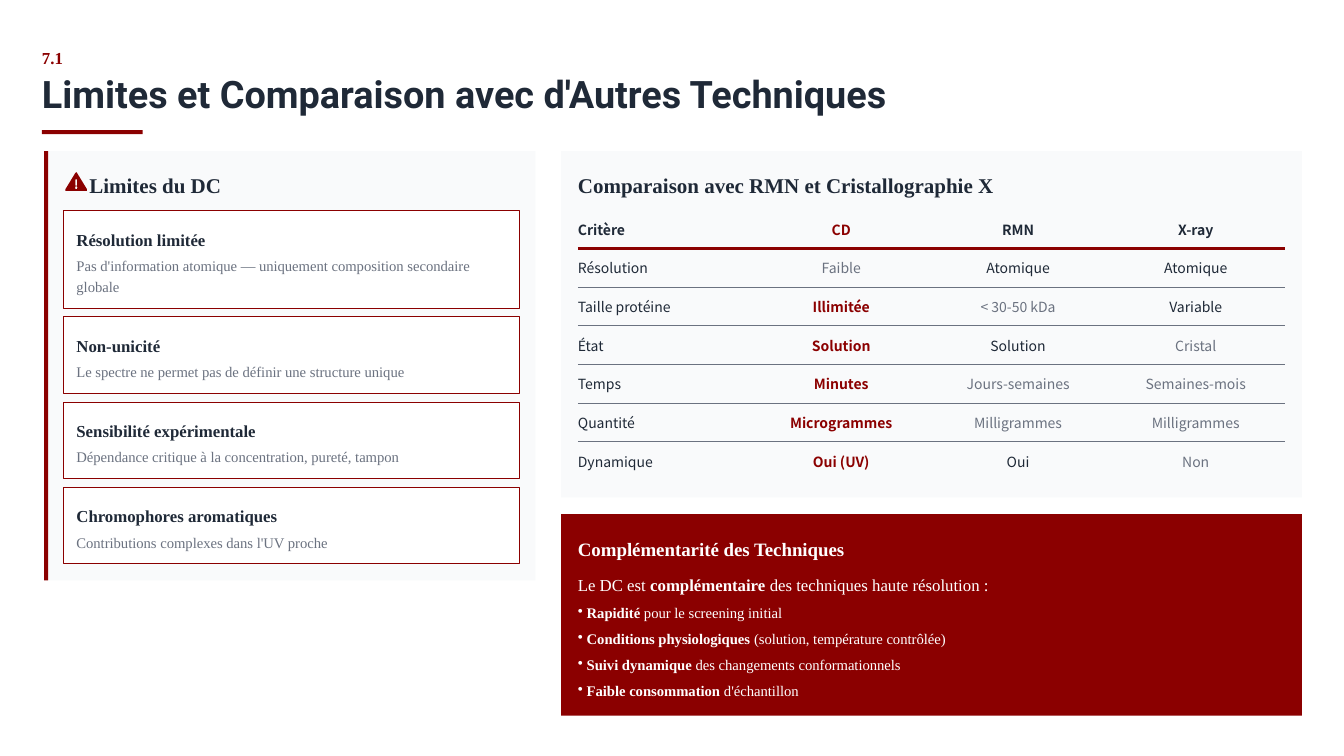
"""Build the slide on the limits of circular dichroism and its comparison with other techniques."""
import math
from dataclasses import dataclass
from typing import NamedTuple, Optional

import lxml.etree
import pptx
import pptx.dml.color
import pptx.enum.shapes
import pptx.enum.text
import pptx.oxml
import pptx.oxml.ns
import pptx.util

COLUMNS, ROWS = 160, 90
CELL = pptx.util.Pt(6)
COLOURS = {"accent": "8B0000", "ink": "1F2937", "muted": "6B7280", "panel": "F9FAFB", "white": "FFFFFF"}
SERIF, TITLE_FONT, TABLE_FONT = "Times New Roman", "Roboto", "Noto Sans CJK SC"
NO_TABLE_STYLE = "{2D5ABB26-0587-4C30-8999-92F81FD0307C}"


class Area(NamedTuple):
    left: float
    top: float
    width: float
    height: float

    def emu(self) -> tuple:
        return tuple(cells(side) for side in self)


@dataclass(frozen=True)
class Style:
    size: float
    tone: str
    bold: bool = False
    spacing: Optional[float] = 1.3
    font: str = SERIF


class Limit(NamedTuple):
    name: str
    detail: str
    lines: int = 1


class Criterion(NamedTuple):
    texts: tuple
    tones: tuple


class Phrase(NamedTuple):
    before: str
    strong: str
    after: str


HEADING = Style(15, "ink", True, 1.2)
LIMIT_NAME = Style(12, "ink", True)
LIMIT_DETAIL = Style(10.5, "muted", spacing=1.2)

PANELS = [
    (Area(5, 15.48, 12, 0.5), "accent"),
    (Area(5.25, 18, 58.5, 51.1), "panel"),
    (Area(5.25, 18, 0.5, 51.1), "accent"),
    (Area(66.8, 18, 88.2, 41.2), "panel"),
    (Area(66.8, 61.2, 88.2, 24), "accent"),
]
LABELS = [
    ("7.1", Area(5, 5, 151, 3), Style(12, "accent", True)),
    ("Limites et Comparaison avec d'Autres Techniques", Area(5, 9, 152, 5),
     Style(27, "ink", True, 0.9, TITLE_FONT)),
    ("Limites du DC", Area(10.65, 20, 52.3, 3.5), HEADING),
    ("Comparaison avec RMN et Cristallographie X", Area(68.8, 20, 85.4, 3.5), HEADING),
    ("Complémentarité des Techniques", Area(68.8, 63.15, 85.3, 3.5), Style(13.5, "white", True)),
]
LIMITS = [
    Limit("Résolution limitée", "Pas d'information atomique — uniquement composition secondaire globale", 2),
    Limit("Non-unicité", "Le spectre ne permet pas de définir une structure unique"),
    Limit("Sensibilité expérimentale", "Dépendance critique à la concentration, pureté, tampon"),
    Limit("Chromophores aromatiques", "Contributions complexes dans l'UV proche"),
]
CRITERIA = [
    Criterion(("Critère", "CD", "RMN", "X-ray"), ("ink", "accent", "ink", "ink")),
    Criterion(("Résolution", "Faible", "Atomique", "Atomique"), ("ink", "muted", "ink", "ink")),
    Criterion(("Taille protéine", "Illimitée", "< 30-50 kDa", "Variable"), ("ink", "accent", "muted", "ink")),
    Criterion(("État", "Solution", "Solution", "Cristal"), ("ink", "accent", "ink", "muted")),
    Criterion(("Temps", "Minutes", "Jours-semaines", "Semaines-mois"), ("ink", "accent", "muted", "muted")),
    Criterion(("Quantité", "Microgrammes", "Milligrammes", "Milligrammes"), ("ink", "accent", "muted", "muted")),
    Criterion(("Dynamique", "Oui (UV)", "Oui", "Non"), ("ink", "accent", "ink", "muted")),
]
SUMMARY = Phrase("Le DC est ", "complémentaire", " des techniques haute résolution :")
STRENGTHS = [
    Phrase("", "Rapidité", " pour le screening initial"),
    Phrase("", "Conditions physiologiques", " (solution, température contrôlée)"),
    Phrase("", "Suivi dynamique", " des changements conformationnels"),
    Phrase("", "Faible consommation", " d'échantillon"),
]


def cells(count: float) -> int:
    return round(count * CELL)


def colour(tone: str) -> pptx.dml.color.RGBColor:
    return pptx.dml.color.RGBColor.from_string(COLOURS[tone])


def format_runs(paragraph, style: Style) -> None:
    if style.spacing:
        paragraph.line_spacing = style.spacing
    for run in paragraph.runs:
        run.font.name, run.font.size = style.font, pptx.util.Pt(style.size)
        run.font.bold, run.font.color.rgb = style.bold, colour(style.tone)


def add_frame(slide, area: Area):
    frame = slide.shapes.add_textbox(*area.emu()).text_frame
    frame.word_wrap = True
    frame.margin_left = frame.margin_right = frame.margin_top = frame.margin_bottom = 0
    frame.vertical_anchor = pptx.enum.text.MSO_ANCHOR.MIDDLE
    return frame


def add_label(slide, text: str, area: Area, style: Style) -> None:
    frame = add_frame(slide, area)
    frame.text = text
    format_runs(frame.paragraphs[0], style)


def add_phrases(slide, phrases: list, area: Area, style: Style, bulleted: bool = False) -> None:
    frame = add_frame(slide, area)
    for index, phrase in enumerate(phrases):
        paragraph = frame.add_paragraph() if index else frame.paragraphs[0]
        if bulleted:
            properties = paragraph._p.get_or_add_pPr()
            hang = pptx.util.Pt(6.3)
            properties.set("marL", str(hang))
            properties.set("indent", str(-hang))
            lxml.etree.SubElement(properties, pptx.oxml.ns.qn("a:buClr")).append(
                pptx.oxml.parse_xml(f'<a:srgbClr {pptx.oxml.ns.nsdecls("a")} val="{COLOURS[style.tone]}"/>'))
            lxml.etree.SubElement(properties, pptx.oxml.ns.qn("a:buChar")).set("char", "•")
        for part in filter(None, phrase):
            paragraph.add_run().text = part
        format_runs(paragraph, style)
        for run in paragraph.runs:
            run.font.bold = run.text == phrase.strong
        if index:
            paragraph.space_before = pptx.util.Pt(3.5)


def paint(shape, fill: str, line: Optional[str] = None) -> None:
    shape.shadow.inherit = False
    shape.fill.solid()
    shape.fill.fore_color.rgb = colour(fill)
    if line:
        shape.line.color.rgb, shape.line.width = colour(line), pptx.util.Pt(0.67)
    else:
        shape.line.fill.background()


def add_panel(slide, area: Area, fill: str, line: Optional[str] = None) -> None:
    paint(slide.shapes.add_shape(pptx.enum.shapes.MSO_SHAPE.RECTANGLE, *area.emu()), fill, line)


def add_warning(slide, left: float, top: float, width: float) -> None:
    triangle = [(10.8, 0.6), (12, 0), (13.2, 0.6), (23.8, 18.6), (23.6, 20.6),
                (22.4, 21), (1.6, 21), (0.4, 20.6), (0.2, 18.6)]
    stem = [(11, 8), (13, 8), (13, 15), (11, 15)]
    dot = [(12 + 1.5 * math.cos(turn * math.pi / 6), 17.7 + 1.5 * math.sin(turn * math.pi / 6))
           for turn in range(12)]
    builder = slide.shapes.build_freeform(*triangle[0], scale=cells(width) / 24)
    builder.add_line_segments(triangle[1:], close=True)
    for hole in (stem, dot):
        builder.move_to(*hole[0])
        builder.add_line_segments(hole[1:], close=True)
    paint(builder.convert_to_shape(cells(left), cells(top)), "accent")


def add_limits(slide, left: float, top: float, width: float, gap: float) -> None:
    for limit in LIMITS:
        height = 6.6 + 2.5 * limit.lines
        add_panel(slide, Area(left, top, width, height), "white", "accent")
        add_label(slide, limit.name, Area(left + 1.55, top + 1.55, 52, 3), LIMIT_NAME)
        add_label(slide, limit.detail, Area(left + 1.55, top + 5.05, 52, 2.5 * limit.lines), LIMIT_DETAIL)
        top += height + gap


def underline(cell, tone: str, points: float) -> None:
    cell._tc.get_or_add_tcPr().insert(0, pptx.oxml.parse_xml(
        f'<a:lnB {pptx.oxml.ns.nsdecls("a")} w="{pptx.util.Pt(points)}"><a:solidFill>'
        f'<a:srgbClr val="{COLOURS[tone]}"/></a:solidFill></a:lnB>'))


def add_comparison(slide, left: float, top: float, widths: tuple, row_height: float) -> None:
    area = Area(left, top, sum(widths), row_height * len(CRITERIA))
    table = slide.shapes.add_table(len(CRITERIA), len(widths), *area.emu()).table
    table.first_row = table.horz_banding = False
    table._tbl.tblPr.find(pptx.oxml.ns.qn("a:tableStyleId")).text = NO_TABLE_STYLE
    for column, width in zip(table.columns, widths):
        column.width = cells(width)
    for row, criterion in enumerate(CRITERIA):
        table.rows[row].height = cells(row_height)
        for column, (text, tone) in enumerate(zip(*criterion)):
            cell = table.cell(row, column)
            cell.fill.background()
            cell.margin_left = cell.margin_right = 0
            cell.margin_top = cell.margin_bottom = cells(1)
            cell.vertical_anchor = pptx.enum.text.MSO_ANCHOR.MIDDLE
            cell.text_frame.text = text
            paragraph = cell.text_frame.paragraphs[0]
            if column:
                paragraph.alignment = pptx.enum.text.PP_ALIGN.CENTER
            format_runs(paragraph, Style(10, tone, row == 0 or tone == "accent", None, TABLE_FONT))
            if row == 0:
                underline(cell, "accent", 2)
            elif row < len(CRITERIA) - 1:
                underline(cell, "muted", 0.67)


def main() -> None:
    deck = pptx.Presentation()
    deck.slide_width, deck.slide_height = cells(COLUMNS), cells(ROWS)
    slide = deck.slides.add_slide(deck.slide_layouts[6])
    for area, fill in PANELS:
        add_panel(slide, area, fill)
    for text, area, style in LABELS:
        add_label(slide, text, area, style)
    add_warning(slide, 7.8, 20.5, 2.55)
    add_limits(slide, 7.55, 25.08, 54.25, 1.05)
    add_comparison(slide, 68.8, 25, (20.8, 21.1, 21, 21.3), 4.6)
    add_phrases(slide, [SUMMARY], Area(68.8, 67.7, 85.2, 3), Style(12, "white"))
    add_phrases(slide, STRENGTHS, Area(68.8, 71.65, 85.1, 11.5), Style(10.5, "white", spacing=1.2), True)
    deck.save("out.pptx")


if __name__ == "__main__":
    main()
